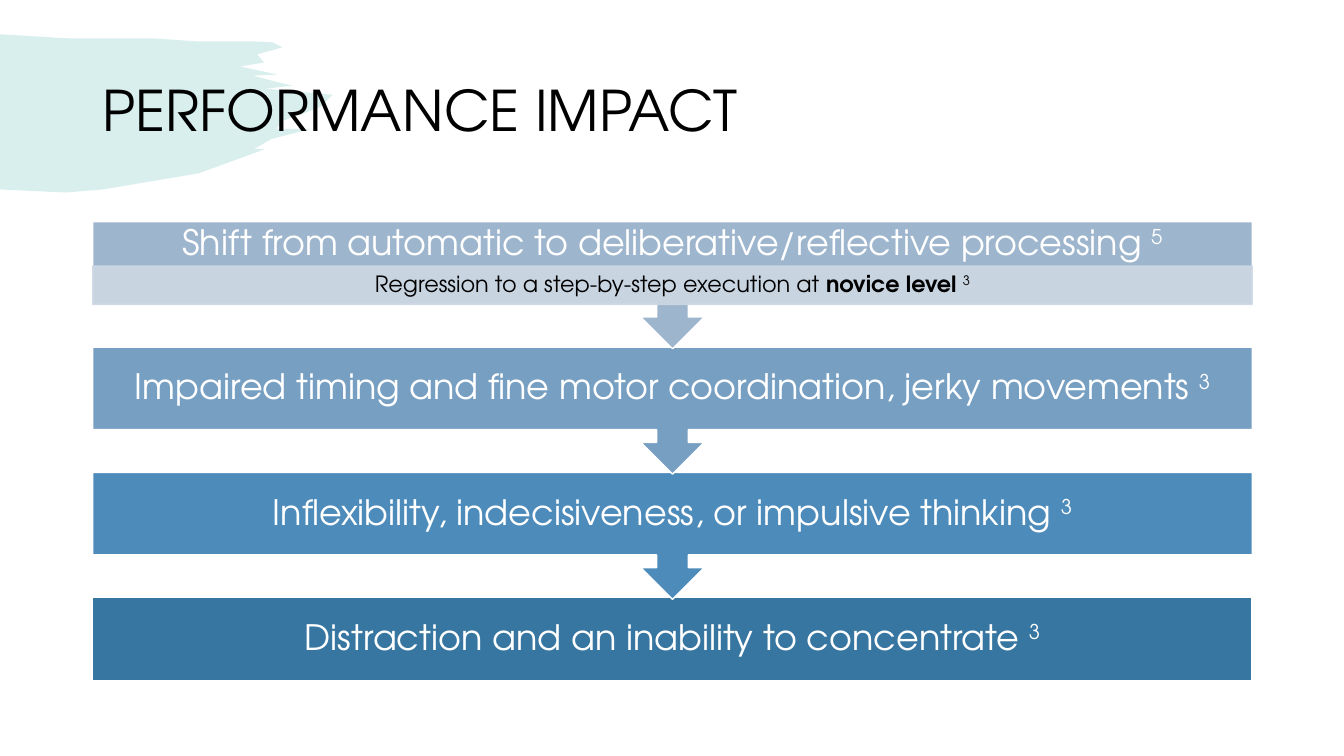
from dataclasses import dataclass

from lxml import etree
from pptx import Presentation
from pptx import util as u
from pptx.dml.color import RGBColor
from pptx.enum import shapes, text
from pptx.oxml.ns import qn


@dataclass(frozen=True)
class Theme:
    font: str = "TeX Gyre Adventor"
    black: str = "000000"
    white: str = "FFFFFF"
    brush: str = "45AFAD"
    band: str = "CED8E4"
    steps: tuple = ("9DB5CD", "779FC2", "4D8BBA", "3676A1")
    title_size: int = 40
    step_size: int = 25
    detail_size: int = 16


THEME = Theme()
LEFT, WIDTH = 0.92, 11.5
TOP, PITCH = 2.2, 1.243
BOX_HEIGHT, CALLOUT_HEIGHT = 0.82, 1.26
HEAD_HEIGHT, DETAIL_HEIGHT = 0.44, 0.38
STEP_INSETS = (0.19, 0.19)
DETAIL_INSETS = (0.12, 0.02)

STEPS = (
    ("Shift from automatic to deliberative/reflective processing ", "5"),
    ("Impaired timing and fine motor coordination, jerky movements ", "3"),
    ("Inflexibility, indecisiveness, or impulsive thinking ", "3"),
    ("Distraction and an inability to concentrate ", "3"),
)

BRUSH_OUTLINE = (
    (0, 0.34), (0.66, 0.38), (1.51, 0.38), (1.94, 0.41), (2.48, 0.41), (2.7, 0.42),
    (2.8, 0.47), (2.55, 0.54), (2.62, 0.62), (2.38, 0.66), (2.75, 0.74), (2.51, 0.75),
    (2.73, 0.81), (2.9, 0.85), (2.63, 0.88), (3.3, 0.94), (3.18, 1.06), (3, 1.13),
    (2.8, 1.2), (2.74, 1.28), (3.08, 1.28), (2.69, 1.38), (2.52, 1.48), (2.63, 1.48),
    (1.97, 1.72), (1.02, 1.88), (0.65, 1.91), (0, 1.88),
)


def box(left, top, width, height):
    return [u.Inches(v) for v in (left, top, width, height)]


def set_opacity(sp, percent):
    for color in sp._element.spPr.iter(qn("a:srgbClr")):
        etree.SubElement(color, qn("a:alpha")).set("val", str(percent * 1000))


def paint(sp, fill, line=None):
    sp.shadow.inherit = False
    sp.fill.solid()
    sp.fill.fore_color.rgb = RGBColor.from_string(fill)
    if line:
        sp.line.color.rgb = RGBColor.from_string(line)
        sp.line.width = u.Pt(1)
    else:
        sp.line.fill.background()


def add_brush(s):
    start, *points = [(u.Inches(x), u.Inches(y)) for x, y in BRUSH_OUTLINE]
    builder = s.shapes.build_freeform(*start)
    builder.add_line_segments(points)
    sp = builder.convert_to_shape()
    paint(sp, THEME.brush)
    set_opacity(sp, 20)


def write(sp, runs, size, color, insets, align=text.PP_ALIGN.CENTER):
    tf = sp.text_frame
    tf.word_wrap = True
    tf.vertical_anchor = text.MSO_ANCHOR.MIDDLE
    tf.margin_left = tf.margin_right = u.Inches(insets[0])
    tf.margin_top = tf.margin_bottom = u.Inches(insets[1])
    p = tf.paragraphs[0]
    p.alignment = align
    p.line_spacing = 0.9
    for content, style in runs:
        r = p.add_run()
        r.text = content
        r.font.name = THEME.font
        r.font.size = u.Pt(size)
        r.font.bold = style == "bold"
        r.font.color.rgb = RGBColor.from_string(color)
        if style == "superscript":
            r.font._element.set("baseline", "30000")


def add_title(s, title):
    sp = s.shapes.add_textbox(*box(LEFT, 0.4, WIDTH, 1.45))
    write(sp, [(title, "plain")], THEME.title_size, THEME.black, (0.1, 0.05),
          text.PP_ALIGN.LEFT)


def add_block(s, kind, top, height, fill, line):
    sp = s.shapes.add_shape(kind, *box(LEFT, top, WIDTH, height))
    paint(sp, fill, line)
    return sp


def add_step(s, index):
    label, source = STEPS[index]
    top = TOP + index * PITCH
    fill = THEME.steps[index]
    if index == len(STEPS) - 1:
        sp = add_block(s, shapes.MSO_SHAPE.RECTANGLE, top, BOX_HEIGHT, fill, THEME.white)
    else:
        callout = add_block(s, shapes.MSO_SHAPE.UP_ARROW_CALLOUT, top, CALLOUT_HEIGHT,
                            fill, THEME.white)
        callout.rotation = 180
        height = HEAD_HEIGHT if index == 0 else BOX_HEIGHT
        sp = s.shapes.add_textbox(*box(LEFT, top, WIDTH, height))
    write(sp, [(label, "plain"), (source, "superscript")],
          THEME.step_size, THEME.white, STEP_INSETS)


def add_detail(s, runs):
    sp = add_block(s, shapes.MSO_SHAPE.RECTANGLE, TOP + HEAD_HEIGHT, DETAIL_HEIGHT,
                   THEME.band, THEME.band)
    set_opacity(sp, 90)
    write(sp, runs, THEME.detail_size, THEME.black, DETAIL_INSETS)


def main():
    prs = Presentation()
    prs.slide_width, prs.slide_height = u.Inches(13.33), u.Inches(7.5)
    s = prs.slides.add_slide(prs.slide_layouts[6])
    add_brush(s)
    add_title(s, "PERFORMANCE IMPACT")
    for index in reversed(range(len(STEPS))):
        add_step(s, index)
    add_detail(s, [("Regression to a step-by-step execution at ", "plain"),
                   ("novice level ", "bold"), ("3", "superscript")])
    prs.save("out.pptx")


if __name__ == "__main__":
    main()
